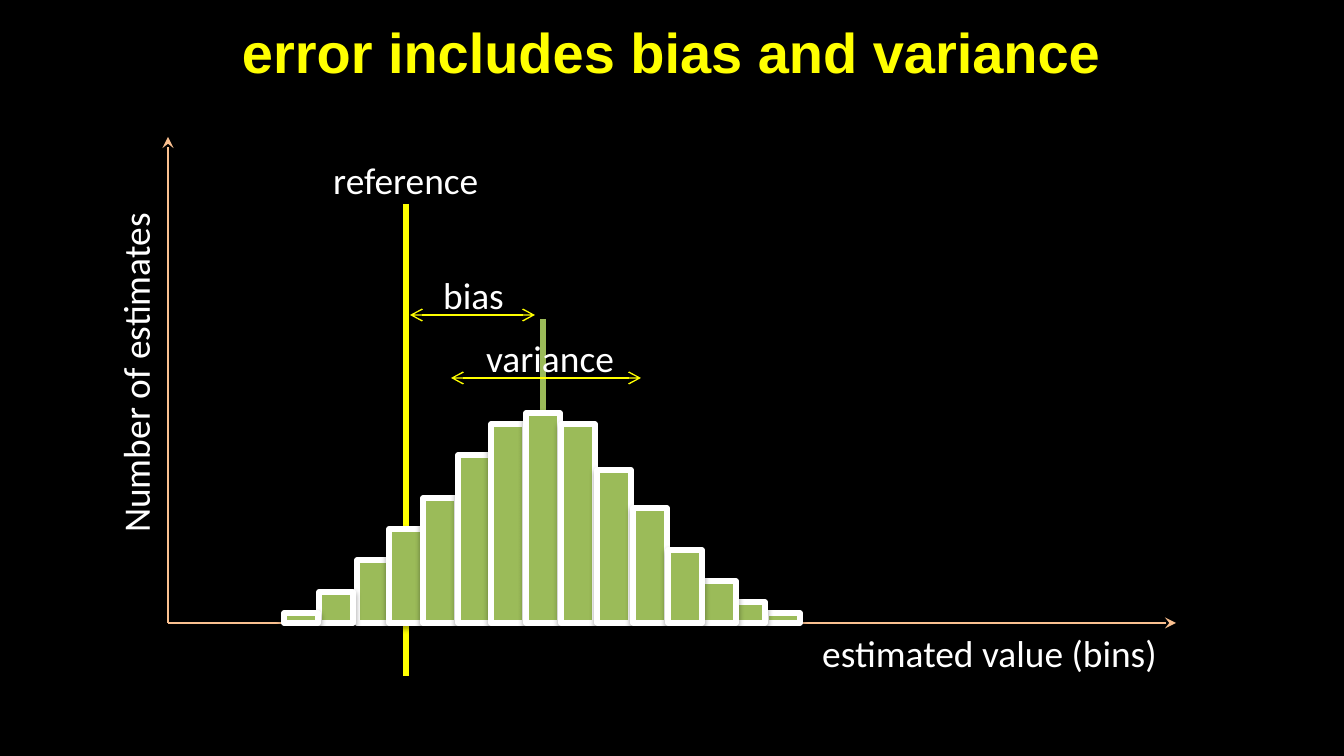
import pptx
import pptx.util
import pptx.dml.color
import pptx.enum.shapes
import pptx.enum.text
import pptx.oxml
import pptx.oxml.ns

PX = 914400 / 134.4
COLORS = {"black": "000000", "yellow": "FFFF00", "axis": "FAC090",
          "green": "9BBB59", "white": "FFFFFF"}


def px(*values):
    return [pptx.util.Emu(round(v * PX)) for v in values]


def add_line(s, ends, color, width, head=None, tail=None):
    line = s.shapes.add_connector(pptx.enum.shapes.MSO_CONNECTOR.STRAIGHT, *px(*ends))
    line.line.color.rgb = rgb[color]
    line.line.width = pptx.util.Pt(width)
    ln = line.line._get_or_add_ln()
    for tag, kind in (("a:headEnd", head), ("a:tailEnd", tail)):
        if kind:
            end = pptx.oxml.ns.qn(tag)
            ln.append(ln.makeelement(end, {"type": kind}))
    line._element.spPr.append(
        pptx.oxml.parse_xml(f"<a:effectLst {pptx.oxml.ns.nsdecls('a')}/>"))
    return line


rgb = {name: pptx.dml.color.RGBColor.from_string(c) for name, c in COLORS.items()}
prs = pptx.Presentation()
prs.slide_width, prs.slide_height = px(1344, 756)
s = prs.slides.add_slide(prs.slide_layouts[5])
s.background.fill.solid()
s.background.fill.fore_color.rgb = rgb["black"]

# Title
title = s.shapes.title
title.left, title.top, title.width, title.height = px(105, 6, 1133, 91)
tf = title.text_frame
tf.vertical_anchor = pptx.enum.text.MSO_ANCHOR.MIDDLE
p = tf.paragraphs[0]
p.alignment = pptx.enum.text.PP_ALIGN.CENTER
r = p.add_run()
r.text = "error includes bias and variance"
r.font.name, r.font.size, r.font.bold = "Arial", pptx.util.Pt(30), True
r.font.color.rgb = rgb["yellow"]

# Axes, reference line and mean line
BASE = 623
add_line(s, (168, BASE, 168, 137), "axis", 0.75, tail="stealth")
add_line(s, (168, BASE, 1176, BASE), "axis", 0.75, tail="stealth")
add_line(s, (406, 204, 406, 676), "yellow", 3)
mean = add_line(s, (543, 319, 543, BASE), "green", 3)

# Histogram bars from back to front: left edge, height
BAR_WIDTH = 34
BARS = [(357, 63), (319, 31), (284, 10), (766, 10), (731, 21),
        (389, 94), (423, 125), (458, 168), (491, 199), (526, 210),
        (561, 199), (597, 153), (633, 115), (702, 42), (668, 73)]
SHADOW = (f"<a:effectLst {pptx.oxml.ns.nsdecls('a')}>"
          '<a:outerShdw blurRad="40000" dist="20000" dir="5400000" rotWithShape="0">'
          f'<a:srgbClr val="{COLORS["black"]}"><a:alpha val="38000"/></a:srgbClr>'
          "</a:outerShdw></a:effectLst>")
bars = []
for left, height in BARS:
    bar = s.shapes.add_shape(pptx.enum.shapes.MSO_SHAPE.RECTANGLE,
                             *px(left, BASE - height, BAR_WIDTH, height))
    bar.fill.solid()
    bar.fill.fore_color.rgb = rgb["green"]
    bar.line.color.rgb = rgb["white"]
    bar.line.width = pptx.util.Pt(3)
    ln = bar.line._get_or_add_ln()
    ln.append(ln.makeelement(pptx.oxml.ns.qn("a:round"), {}))
    bar._element.spPr.append(pptx.oxml.parse_xml(SHADOW))
    bars.append(bar)
mean.end_connect(max(bars, key=lambda b: b.height), 2)

# Bias and variance arrows
for ends in ((410, 315, 535, 315), (451, 378, 641, 378)):
    add_line(s, ends, "yellow", 0.75, head="arrow", tail="arrow")

# Labels: text, box, rotation
LABELS = [("estimated value (bins)", (809, 624, 366, 59), 0),
          ("Number of estimates", (-40, 341, 351, 59), 270),
          ("reference", (320, 151, 173, 59), 0),
          ("bias", (430, 266, 89, 59), 0),
          ("variance", (473, 329, 156, 59), 0)]
for text, box, rotation in LABELS:
    sp = s.shapes.add_textbox(*px(*box))
    sp.rotation = rotation
    tf = sp.text_frame
    tf.word_wrap = False
    tf.auto_size = pptx.enum.text.MSO_AUTO_SIZE.SHAPE_TO_FIT_TEXT
    r = tf.paragraphs[0].add_run()
    r.text = text
    r.font.name, r.font.size = "Calibri", pptx.util.Pt(20)
    r.font.color.rgb = rgb["white"]

prs.save("out.pptx")
